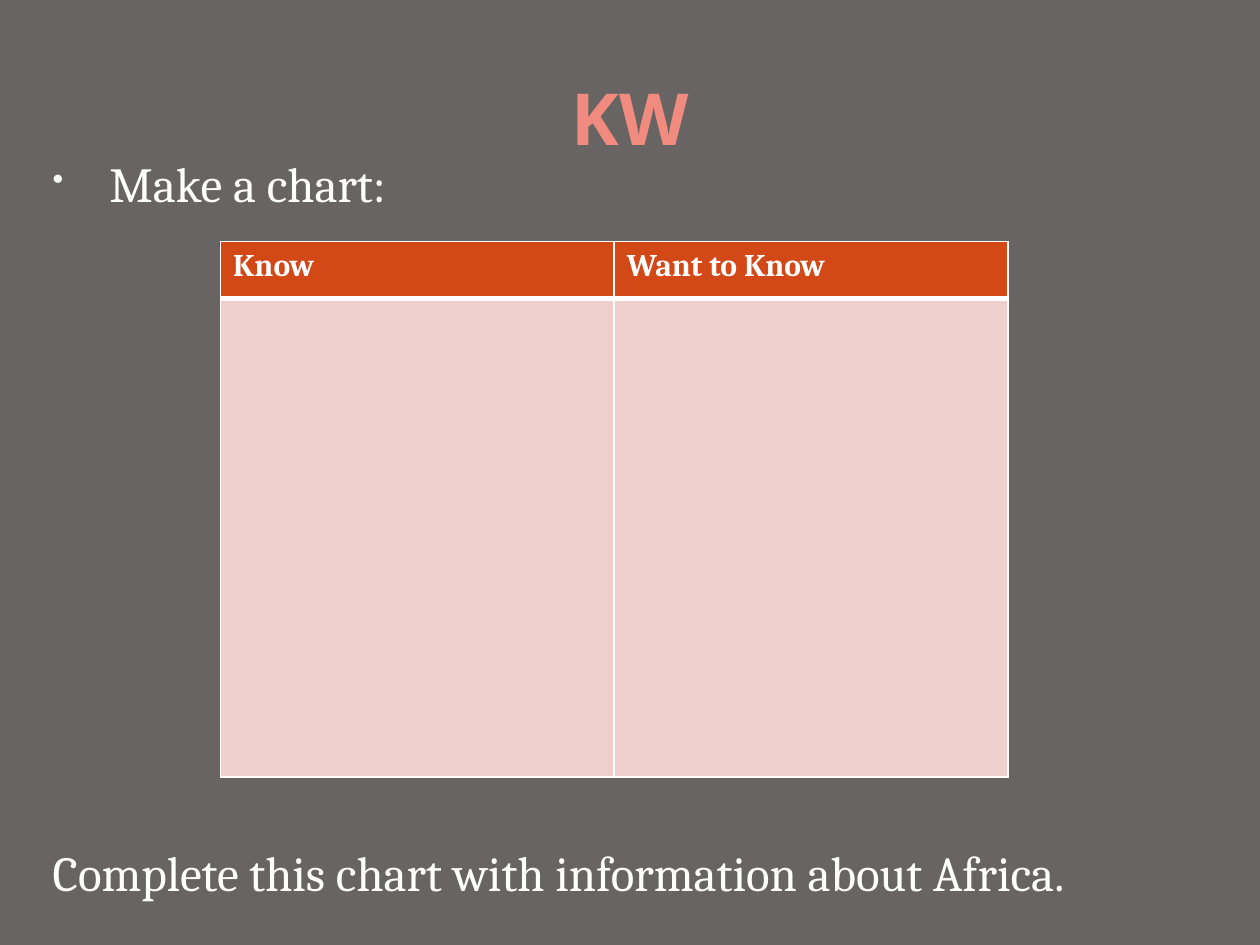
from lxml import etree
from pptx import Presentation
from pptx.dml.color import RGBColor
from pptx.enum.text import MSO_ANCHOR, PP_ALIGN
from pptx.oxml.ns import qn
from pptx.util import Pt

CENTER, LEFT = PP_ALIGN.CENTER, PP_ALIGN.LEFT
MIDDLE, TOP = MSO_ANCHOR.MIDDLE, MSO_ANCHOR.TOP

BACKGROUND = "696464"
WHITE = "FFFFFF"
TITLE_FONT = {"name": "Open Sans", "size": Pt(41), "bold": True}
BODY_FONT = {"name": "Cambria", "size": Pt(28)}
HEAD_FONT = {"name": "Cambria", "size": Pt(18), "bold": True}

TITLE = {"text": "KW", "font": TITLE_FONT, "color": "F28B7F",
         "format": {"alignment": CENTER}}
BODY = [
    {"text": "Make a chart:", "font": BODY_FONT, "color": WHITE,
     "margin": 43.2, "indent": -32.4, "bullet": "•"},
    {"text": "Complete this chart with information about Africa.",
     "font": BODY_FONT, "color": WHITE, "margin": 10.8,
     "format": {"space_before": Pt(360)}},
]
TEXT_BOXES = [
    ((36, 21.6, 648, 90), MIDDLE, [TITLE]),
    ((12.24, 84.24, 648, 455.76), TOP, BODY),
]
TABLE_BOX = (126, 138, 450, 306)
HEADERS = ["Know", "Want to Know"]
ROWS = [
    {"height": 32.4, "texts": HEADERS, "fill": "D34817", "bottom": 3},
    {"height": 273.6, "texts": ["", ""], "fill": "EFCFCC", "top": 3},
]


def rgb(color):
    return RGBColor.from_string(color)


def set_attrs(obj, values):
    for name, value in values.items():
        setattr(obj, name, value)


def fill_solid(fill, color):
    fill.solid()
    fill.fore_color.rgb = rgb(color)


def add_text(p, item):
    set_attrs(p, {"alignment": LEFT, **item.get("format", {})})
    pPr = p._p.get_or_add_pPr()
    pPr.set("marL", str(Pt(item.get("margin", 0))))
    pPr.set("indent", str(Pt(item.get("indent", 0))))
    if "bullet" in item:
        clr = etree.SubElement(pPr, qn("a:buClr"))
        etree.SubElement(clr, qn("a:srgbClr"), val="F9F9F9")
        etree.SubElement(pPr, qn("a:buSzPct"), val="65000")
        etree.SubElement(pPr, qn("a:buChar"), char=item["bullet"])
    r = p.add_run()
    r.text = item["text"]
    set_attrs(r.font, item["font"])
    r.font.color.rgb = rgb(item["color"])


def add_text_box(s, box, anchor, items):
    tf = s.shapes.add_textbox(*map(Pt, box)).text_frame
    set_attrs(tf, {"word_wrap": True, "vertical_anchor": anchor})
    for i, item in enumerate(items):
        add_text(tf.add_paragraph() if i else tf.paragraphs[0], item)


def set_borders(cell, top, bottom):
    tcPr = cell._tc.get_or_add_tcPr()
    widths = {"a:lnL": 1, "a:lnR": 1, "a:lnT": top, "a:lnB": bottom}
    for i, (tag, width) in enumerate(widths.items()):
        ln = etree.Element(qn(tag), w=str(Pt(width)))
        solid = etree.SubElement(ln, qn("a:solidFill"))
        etree.SubElement(solid, qn("a:srgbClr"), val=WHITE)
        tcPr.insert(i, ln)


def add_chart_table(s):
    cols = len(HEADERS)
    table = s.shapes.add_table(len(ROWS), cols, *map(Pt, TABLE_BOX)).table
    for col in table.columns:
        col.width = Pt(TABLE_BOX[2] / cols)
    for i, row in enumerate(ROWS):
        table.rows[i].height = Pt(row["height"])
        for j, text in enumerate(row["texts"]):
            cell = table.cell(i, j)
            fill_solid(cell.fill, row["fill"])
            set_borders(cell, row.get("top", 1), row.get("bottom", 1))
            if text:
                add_text(cell.text_frame.paragraphs[0],
                         {"text": text, "font": HEAD_FONT, "color": WHITE})


def main():
    prs = Presentation()
    set_attrs(prs, {"slide_width": Pt(720), "slide_height": Pt(540)})
    s = prs.slides.add_slide(prs.slide_layouts[6])
    fill_solid(s.background.fill, BACKGROUND)
    for box, anchor, items in TEXT_BOXES:
        add_text_box(s, box, anchor, items)
    add_chart_table(s)
    prs.save("out.pptx")


if __name__ == "__main__":
    main()
